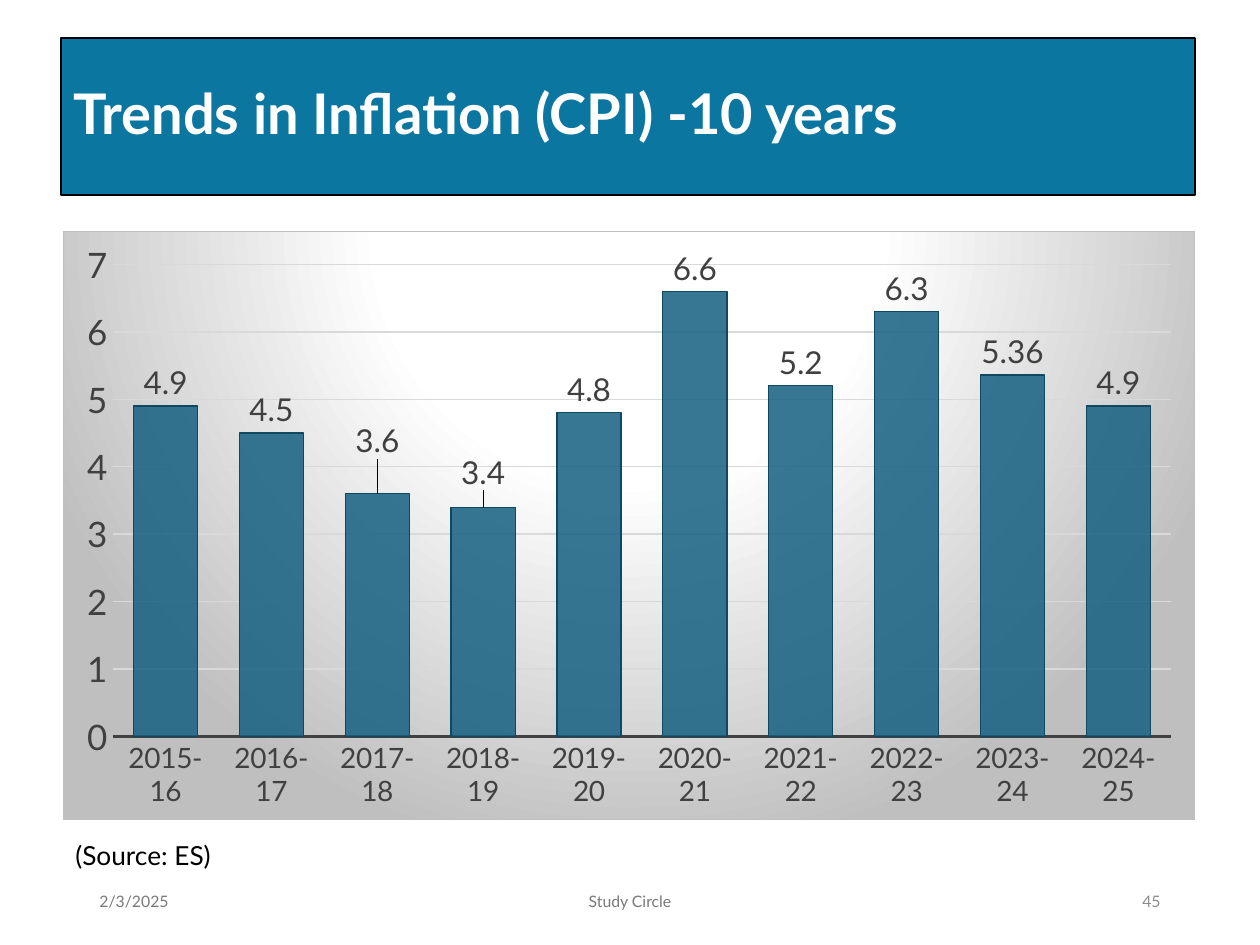
import lxml.etree
import pptx
import pptx.chart.data
import pptx.dml.color
import pptx.enum.chart
import pptx.enum.text
import pptx.oxml
import pptx.oxml.ns
import pptx.util

RGB = pptx.dml.color.RGBColor
ALIGN = pptx.enum.text.PP_ALIGN
ANCHOR = pptx.enum.text.MSO_ANCHOR
NSDECLS = pptx.oxml.ns.nsdecls("a", "c")
qn = pptx.oxml.ns.qn

FONT = "Lato"
BLACK = RGB(0x00, 0x00, 0x00)
WHITE = RGB(0xFF, 0xFF, 0xFF)
TITLE_BLUE = RGB(0x0B, 0x76, 0xA0)
BAR_BLUE = RGB(0x15, 0x60, 0x82)
BAR_EDGE = RGB(0x10, 0x48, 0x62)
DARK_GREY = RGB(0x40, 0x40, 0x40)
FOOTER_GREY = RGB(0x79, 0x79, 0x79)
NUMBER_GREY = RGB(0x8C, 0x8C, 0x8C)
GRID_GREY = RGB(0xD9, 0xD9, 0xD9)
AREA_GREY = RGB(0xBF, 0xBF, 0xBF)

FIRST_YEAR = 2015
INFLATION = [4.9, 4.5, 3.6, 3.4, 4.8, 6.6, 5.2, 6.3, 5.36, 4.9]
LABEL_SHIFTS = {2: -0.05, 3: -0.02}  # bar index: share of chart height
CHART_W, CHART_H = 1132, 589


def px(n):
    return pptx.util.Emu(round(n * 914400 / 126))


def place(sp, x, y, w, h):
    sp.left, sp.top, sp.width, sp.height = px(x), px(y), px(w), px(h)


def set_font(font, size, color, bold=False):
    font.name = FONT
    font.size = pptx.util.Pt(size)
    font.bold = bold
    font.color.rgb = color


def set_line(line, color, width):
    line.color.rgb = color
    line.width = pptx.util.Pt(width)


def write(tf, text, size=9, color=FOOTER_GREY, bold=False,
          align=ALIGN.LEFT, anchor=ANCHOR.MIDDLE, spacing=1.0):
    tf.word_wrap = True
    tf.auto_size = pptx.enum.text.MSO_AUTO_SIZE.NONE
    tf.vertical_anchor = anchor
    p = tf.paragraphs[0]
    p.alignment = align
    p.line_spacing = spacing
    r = p.add_run()
    r.text = text
    set_font(r.font, size, color, bold)


def add_title(s, text):
    sp = s.shapes.title
    place(sp, 61, 38, 1134, 157)
    sp.fill.solid()
    sp.fill.fore_color.rgb = TITLE_BLUE
    set_line(sp.line, BLACK, 0.75)
    write(sp.text_frame, text, size=32, color=WHITE, bold=True, spacing=0.9)


def add_text(s, text, x, y, w, h, **fmt):
    sp = s.shapes.add_textbox(px(x), px(y), px(w), px(h))
    write(sp.text_frame, text, **fmt)


def fill_chart_area(chart):
    """Give the chart area a radial white-to-grey gradient and a thin border."""
    stops = "".join(
        f'<a:gs pos="{pos * 1000}"><a:srgbClr val="{color}"/></a:gs>'
        for pos, color in [(0, WHITE), (39, WHITE), (100, AREA_GREY)])
    area = pptx.oxml.parse_xml(
        f'<c:spPr {NSDECLS}><a:gradFill><a:gsLst>{stops}</a:gsLst>'
        '<a:path path="circle"><a:fillToRect l="50000" t="-80000" r="50000" b="180000"/>'
        f'</a:path></a:gradFill><a:ln w="9525"><a:solidFill><a:srgbClr val="{AREA_GREY}"/>'
        '</a:solidFill></a:ln></c:spPr>')
    chart.element.find(qn("c:chart")).addnext(area)


def manual_layout(**values):
    tags = "".join(f'<c:{tag} val="{val}"/>' for tag, val in values.items())
    return pptx.oxml.parse_xml(
        f"<c:layout {NSDECLS}><c:manualLayout>{tags}</c:manualLayout></c:layout>")


def hide_leader_lines(series):
    series._element.find(qn("c:dLbls")).append(pptx.oxml.parse_xml(
        f'<c:extLst {NSDECLS}><c:ext uri="{{CE6537A1-D6FC-4f65-9D91-7224C49458BB}}" '
        'xmlns:c15="http://schemas.microsoft.com/office/drawing/2012/chart">'
        '<c15:showLeaderLines val="0"/></c:ext></c:extLst>'))


def format_axis(axis, size):
    axis.major_tick_mark = axis.minor_tick_mark = pptx.enum.chart.XL_TICK_MARK.NONE
    set_font(axis.tick_labels.font, size, DARK_GREY)


def format_bars(plot):
    plot.gap_width = 65
    plot.vary_by_categories = False
    series = plot.series[0]
    series.invert_if_negative = False
    series.format.fill.solid()
    series.format.fill.fore_color.rgb = BAR_BLUE
    color = series.format.fill._xPr.find(".//" + qn("a:srgbClr"))
    lxml.etree.SubElement(color, qn("a:alpha"), val="85000")
    set_line(series.format.line, BAR_EDGE, 0.75)

    outside = pptx.enum.chart.XL_LABEL_POSITION.OUTSIDE_END
    labels = series.data_labels
    labels.show_value = True
    labels.position = outside
    set_font(labels.font, 18, DARK_GREY)
    for i, shift in LABEL_SHIFTS.items():
        label = series.points[i].data_label
        set_font(label.font, 18, DARK_GREY)
        label.position = outside
        idx = series._element.find(f'.//{qn("c:dLbl")}/{qn("c:idx")}[@val="{i}"]')
        idx.addnext(manual_layout(x=0, y=shift))
    hide_leader_lines(series)


def add_inflation_chart(s):
    data = pptx.chart.data.CategoryChartData()
    data.categories = [f"{year}-{(year + 1) % 100}"
                       for year in range(FIRST_YEAR, FIRST_YEAR + len(INFLATION))]
    data.add_series("Series 1", INFLATION)
    chart = s.shapes.add_chart(
        pptx.enum.chart.XL_CHART_TYPE.COLUMN_CLUSTERED,
        px(63), px(231), px(CHART_W), px(CHART_H), data).chart
    chart.has_title = chart.has_legend = False
    set_font(chart.font, 10, BLACK)
    fill_chart_area(chart)

    area = chart.element.find(".//" + qn("c:plotArea"))
    for old in area.findall(qn("c:layout")):
        area.remove(old)
    area.insert(0, manual_layout(layoutTarget="inner", xMode="edge", yMode="edge",
                                 x=49 / CHART_W, y=33 / CHART_H,
                                 w=1060 / CHART_W, h=473 / CHART_H))

    format_axis(chart.category_axis, 16)
    set_line(chart.category_axis.format.line, DARK_GREY, 1.5)
    values = chart.value_axis
    format_axis(values, 20)
    values.minimum_scale, values.maximum_scale, values.major_unit = 0, 7, 1
    values.format.line.fill.background()
    set_line(values.major_gridlines.format.line, GRID_GREY, 0.75)
    format_bars(chart.plots[0])


def main():
    prs = pptx.Presentation()
    prs.slide_width, prs.slide_height = px(1260), px(945)
    s = prs.slides.add_slide(prs.slide_layouts[5])
    add_title(s, "Trends in Inflation (CPI) -10 years")
    add_inflation_chart(s)
    add_text(s, "(Source: ES)", 63, 833, 417, 44,
             size=15, color=BLACK, anchor=ANCHOR.TOP)
    add_text(s, "2/3/2025", 87, 876, 283, 50)
    add_text(s, "Study Circle", 417, 876, 426, 50, align=ALIGN.CENTER)
    add_text(s, "45", 890, 876, 283, 50, color=NUMBER_GREY, align=ALIGN.RIGHT)
    prs.save("out.pptx")


if __name__ == "__main__":
    main()
